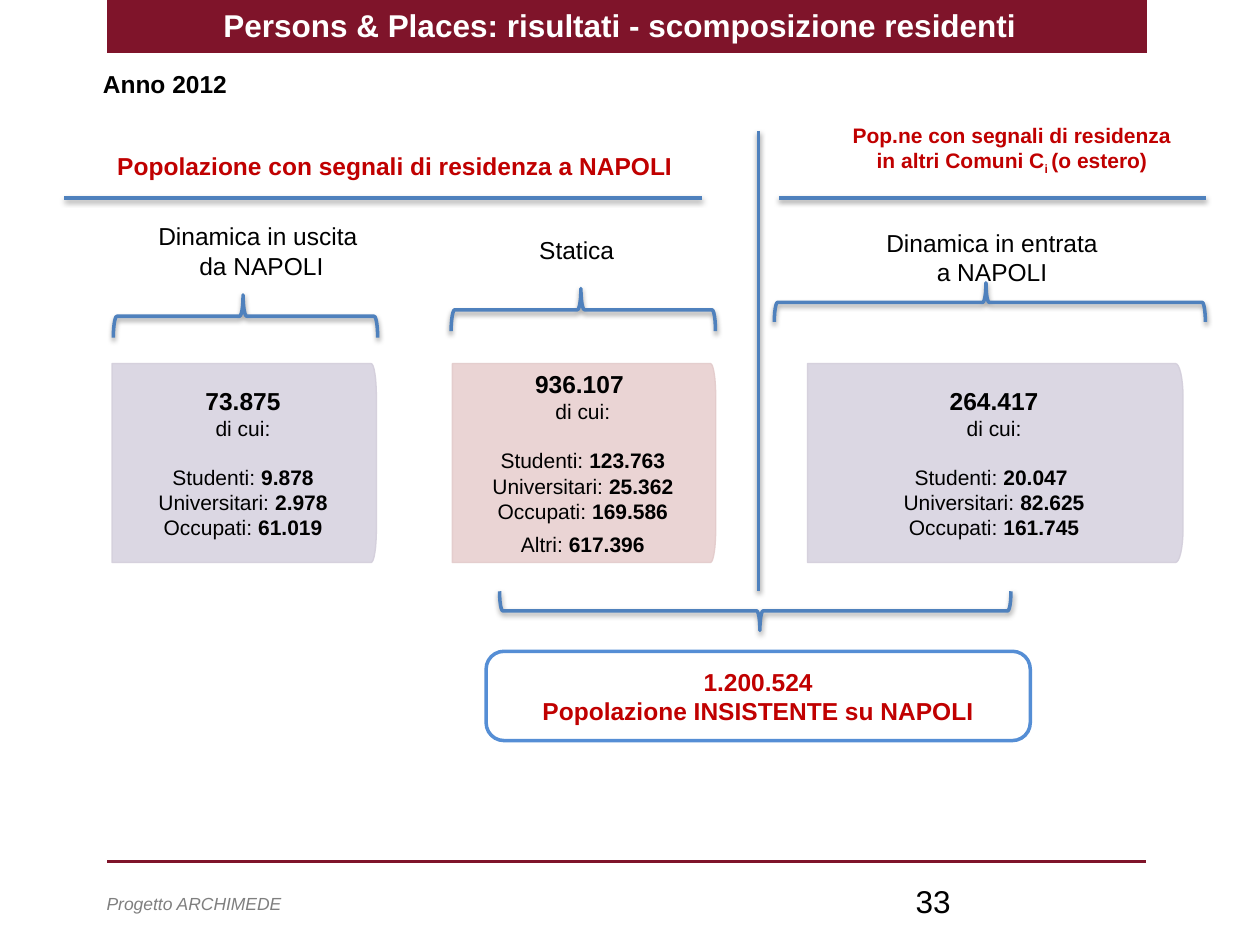
from math import cos, pi, sin

from lxml import etree
from pptx import Presentation
from pptx.dml.color import RGBColor
from pptx.enum.shapes import MSO_CONNECTOR, MSO_SHAPE
from pptx.enum.text import MSO_ANCHOR, PP_ALIGN
from pptx.oxml.ns import qn
from pptx.util import Cm, Pt

FONT = "Arial"
WINE, RED, BLUE = "7F142A", "C00000", "4F81BD"
BLACK, WHITE, GREY = "000000", "FFFFFF", "7F7F7F"
LILAC, PINK = ("D8D3E0", "D3CEDB"), ("E8D0D0", "E3CBCB")


def rgb(value):
    return RGBColor.from_string(value)


class Deck:
    """Holds the style and the current slide."""

    def __init__(self, prs):
        self.s = prs.slides.add_slide(prs.slide_layouts[5])

    def effects(self, sp, shadow=True):
        spPr = sp._element.spPr
        for old in spPr.findall(qn("a:effectLst")):
            spPr.remove(old)
        lst = etree.SubElement(spPr, qn("a:effectLst"))
        if shadow:
            shdw = etree.SubElement(lst, qn("a:outerShdw"), blurRad=str(Pt(3.1)),
                                    dist=str(Pt(1.6)), dir="5400000", rotWithShape="0")
            clr = etree.SubElement(shdw, qn("a:srgbClr"), val=BLACK)
            etree.SubElement(clr, qn("a:alpha"), val="38000")

    def paint(self, sp, fill, line=None, width=2.0):
        sp.shadow.inherit = False
        if fill:
            sp.fill.solid()
            sp.fill.fore_color.rgb = rgb(fill)
        else:
            sp.fill.background()
        if line:
            sp.line.color.rgb = rgb(line)
            sp.line.width = Pt(width)
        else:
            sp.line.fill.background()

    def style(self, p, size, color=BLACK, bold=False, italic=False, align=PP_ALIGN.CENTER):
        p.alignment = align
        f = p.font
        f.name, f.size, f.bold, f.italic = FONT, Pt(size), bold, italic
        f.color.rgb = rgb(color)

    def put_lines(self, tf, lines, size, **look):
        tf.word_wrap = True
        for i, line in enumerate(lines):
            p = tf.paragraphs[0] if i == 0 else tf.add_paragraph()
            for part in [line] if isinstance(line, str) else line:
                p.add_run().text = part
            self.style(p, size, **look)

    def title(self, text, x, y, w, h):
        sp = self.s.shapes.title
        sp.left, sp.top, sp.width, sp.height = Cm(x), Cm(y), Cm(w), Cm(h)
        sp.text_frame.vertical_anchor = MSO_ANCHOR.TOP
        self.put_lines(sp.text_frame, [text], 18, color=WHITE, bold=True)

    def text(self, lines, x, y, w, h, size=14, **look):
        sp = self.s.shapes.add_textbox(Cm(x), Cm(y), Cm(w), Cm(h))
        self.put_lines(sp.text_frame, lines, size, **look)
        return sp.text_frame

    def shape(self, kind, x, y, w, h, fill, line=None):
        sp = self.s.shapes.add_shape(kind, Cm(x), Cm(y), Cm(w), Cm(h))
        self.paint(sp, fill, line)
        return sp

    def line(self, x1, y1, x2, y2, color=BLUE, shadow=True):
        c = self.s.shapes.add_connector(MSO_CONNECTOR.STRAIGHT, Cm(x1), Cm(y1), Cm(x2), Cm(y2))
        c.line.color.rgb = rgb(color)
        c.line.width = Pt(2)
        self.effects(c, shadow)

    def brace(self, x, y, w, h, rotation=270):
        sp = self.shape(MSO_SHAPE.RIGHT_BRACE, x, y, w, h, None, BLUE)
        sp.rotation = rotation
        sp.adjustments[0], sp.adjustments[1] = 0.083, 0.491
        self.effects(sp)

    def panel(self, x, y, w, h, colors, total, groups, other=None):
        # Outline with both right-hand corners bent into quarter ellipses
        rx, ry = w * 0.02, h / 6
        arc = [(rx * sin(i * pi / 16), ry * cos(i * pi / 16)) for i in range(9)]
        upper = [(x + w - rx + a, y + ry - b) for a, b in arc]
        lower = [(x + w - rx + a, y + h - ry + b) for a, b in reversed(arc)]
        fb = self.s.shapes.build_freeform(Cm(x), Cm(y))
        fb.add_line_segments([(Cm(a), Cm(b)) for a, b in upper + lower + [(x, y + h)]])
        sp = fb.convert_to_shape()
        self.paint(sp, *colors, width=0.75)
        for clr in list(sp._element.spPr.iter(qn("a:srgbClr"))):
            etree.SubElement(clr, qn("a:alpha"), val="90000")
        # Total first, then its breakdown
        tf = sp.text_frame
        tf.vertical_anchor = MSO_ANCHOR.MIDDLE
        tf.margin_left, tf.margin_right = Cm(0.38), Cm(0.43)
        tf.margin_top = tf.margin_bottom = Cm(0.25)
        self.put_lines(tf, [total], 14, bold=True)
        rows = [("di cui:", "", 0)]
        rows += [(label, value, 0 if i else 13.8) for i, (label, value) in enumerate(groups)]
        if other:
            rows.append(("Altri: ", other, 4.6))
        for label, value, gap in rows:
            p = tf.add_paragraph()
            p.add_run().text = label
            if value:
                r = p.add_run()
                r.text = value
                r.font.bold = True
            self.style(p, 12)
            p.space_before = Pt(gap)


def main():
    prs = Presentation()
    prs.slide_width, prs.slide_height = Cm(25.4), Cm(19.05)
    d = Deck(prs)

    # Banner behind the title, footer
    banner = d.shape(MSO_SHAPE.RECTANGLE, 2.16, 0, 20.96, 1.07, WINE)
    d.s.shapes.title._element.addprevious(banner._element)
    d.title("Persons & Places: risultati - scomposizione residenti", 1.98, 0, 21.03, 1.12)
    d.line(2.16, 17.37, 23.11, 17.37, WINE, shadow=False)
    d.text(["Progetto ARCHIMEDE"], 1.9, 17.88, 15.65, 0.69, 10,
           color=GREY, italic=True, align=PP_ALIGN.LEFT)
    d.text(["33"], 18.21, 17.65, 5.92, 1.02, 18, align=PP_ALIGN.LEFT)

    # Headings
    d.text(["Anno 2012 "], 1.3, 1.27, 4.19, 0.86, bold=True)
    d.text(["Popolazione con segnali di residenza a NAPOLI"], 1.5, 2.92, 12.93, 0.86,
           color=RED, bold=True)
    tf = d.text(["Pop.ne con segnali di residenza", ("in altri Comuni C", "i ", "(o estero)")],
                15.7, 2.34, 9.4, 1.63, 12, color=RED, bold=True)
    tf.paragraphs[1].runs[1]._r.get_or_add_rPr().set("baseline", "-25000")
    d.text(["Dinamica in uscita ", "da NAPOLI"], 1.42, 4.34, 7.7, 1.45)
    d.text(["Statica"], 10.62, 4.62, 2.29, 0.86, align=PP_ALIGN.LEFT)
    d.text(["Dinamica in entrata", "a NAPOLI"], 16.15, 4.47, 7.7, 1.45)

    # Population panels
    names = ("Studenti: ", "Universitari: ", "Occupati: ")
    for x, w, colors, total, values, other in (
        (2.26, 5.33, LILAC, "73.875", ("9.878", "2.978", "61.019"), None),
        (9.12, 5.31, PINK, "936.107 ", ("123.763", "25.362", "169.586"), "617.396"),
        (16.28, 7.57, LILAC, "264.417", ("20.047 ", "82.625", "161.745"), None),
    ):
        d.panel(x, 7.33, w, 4.01, colors, total, zip(names, values), other)

    # Divider, rules and braces
    d.line(15.29, 2.64, 15.29, 11.91)
    d.line(1.3, 3.99, 14.15, 3.99)
    d.line(15.7, 3.99, 24.31, 3.99)
    d.brace(4.52, 3.71, 0.86, 5.33)
    d.brace(11.33, 3.58, 0.86, 5.33)
    d.brace(19.56, 1.75, 0.79, 8.69)
    d.brace(14.83, 7.16, 0.79, 10.31, 90)

    # Resulting population
    sp = d.shape(MSO_SHAPE.ROUNDED_RECTANGLE, 9.8, 13.13, 10.97, 1.8, WHITE, "558ED5")
    sp.adjustments[0] = 0.2
    sp.text_frame.vertical_anchor = MSO_ANCHOR.MIDDLE
    d.put_lines(sp.text_frame, ["1.200.524", "Popolazione INSISTENTE su NAPOLI"], 14,
                color=RED, bold=True)

    prs.save("out.pptx")


if __name__ == "__main__":
    main()
